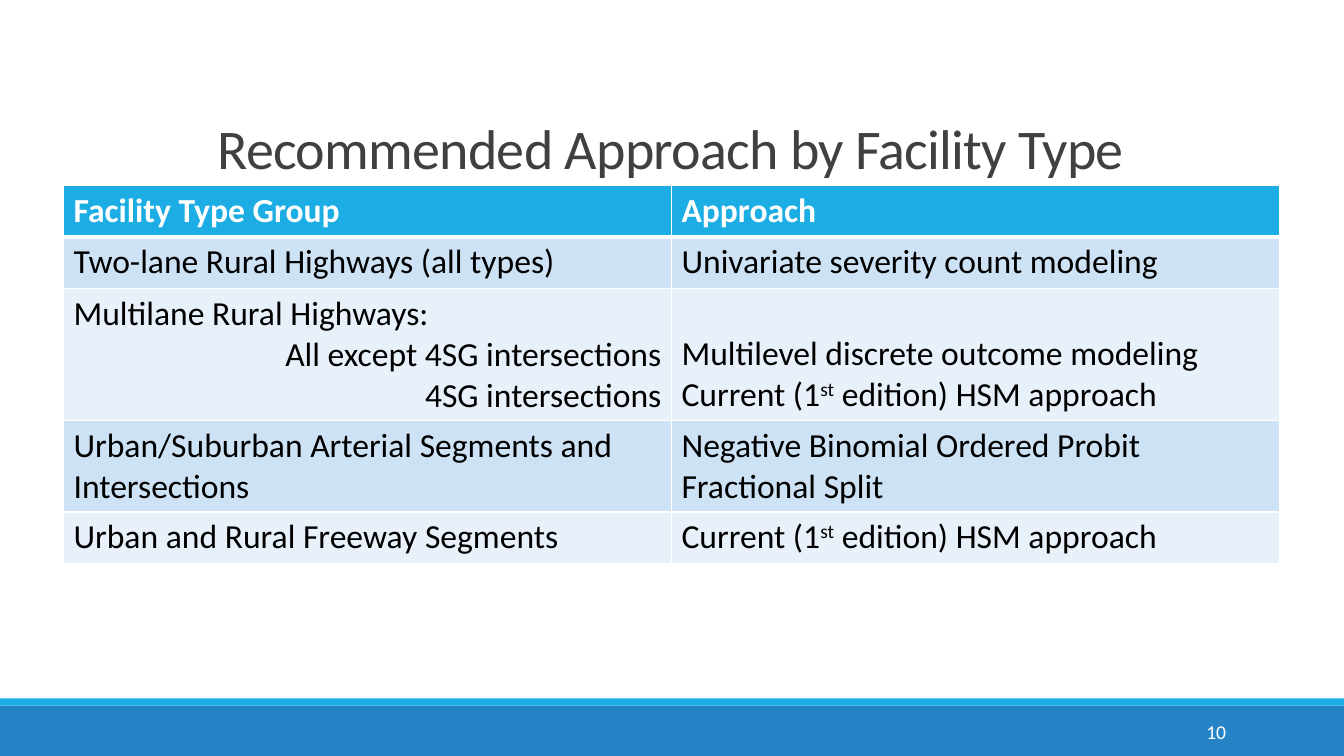
import pptx
import pptx.dml.color
import pptx.enum.shapes
import pptx.enum.text
import pptx.util
from lxml import etree
from pptx.oxml.ns import qn
from pptx.util import Inches

RGBColor = pptx.dml.color.RGBColor
PP_ALIGN = pptx.enum.text.PP_ALIGN
MSO_ANCHOR = pptx.enum.text.MSO_ANCHOR

WHITE = RGBColor(0xFF, 0xFF, 0xFF)
BLACK = RGBColor(0x00, 0x00, 0x00)
DARK_GRAY = RGBColor(0x40, 0x40, 0x40)
BLUE = RGBColor(0x26, 0x83, 0xC6)
CYAN = RGBColor(0x1C, 0xAD, 0xE4)
BAND_FILLS = [RGBColor(0xE8, 0xF1, 0xFA), RGBColor(0xCD, 0xE3, 0xF5)]


def write_paragraph(paragraph, text, size, color, bold=False):
    """Write text as runs; the parts between ^ marks become superscript."""
    for part_no, part in enumerate(text.split("^")):
        run = paragraph.add_run()
        run.text = part
        formats = {"name": "Calibri", "size": pptx.util.Pt(size), "bold": bold}
        for key, value in formats.items():
            setattr(run.font, key, value)
        run.font.color.rgb = color
        if part_no % 2:
            run._r.get_or_add_rPr().set("baseline", "30000")


def add_border(cell, side, width):
    line = etree.SubElement(cell._tc.get_or_add_tcPr(), qn(f"a:ln{side}"),
                            w=str(pptx.util.Pt(width)))
    fill = etree.SubElement(line, qn("a:solidFill"))
    etree.SubElement(fill, qn("a:srgbClr"), val=str(WHITE))


deck = pptx.Presentation()
deck.slide_width = Inches(13.33)
deck.slide_height = Inches(7.5)
slide = deck.slides.add_slide(deck.slide_layouts[6])

# Footer bands
for top, height, color in [(7, 0.5, BLUE), (6.93, 0.07, CYAN)]:
    band = slide.shapes.add_shape(pptx.enum.shapes.MSO_SHAPE.RECTANGLE, Inches(0),
                                  Inches(top), Inches(13.33), Inches(height))
    band.shadow.inherit = False
    band.fill.solid()
    band.fill.fore_color.rgb = color
    band.line.fill.background()

# Slide number and title
captions = [
    ("10", (10.83, 7.06, 1.43, 0.4), 14, WHITE,
     {"alignment": PP_ALIGN.RIGHT}, MSO_ANCHOR.MIDDLE, 0),
    ("Recommended Approach by Facility Type", (1.71, 1.09, 9.88, 0.75), 40, DARK_GRAY,
     {"alignment": PP_ALIGN.CENTER, "line_spacing": 0.85}, MSO_ANCHOR.BOTTOM, -50),
]
for text, box, size, color, paragraph_format, anchor, letter_spacing in captions:
    frame = slide.shapes.add_textbox(*map(Inches, box)).text_frame
    frame.word_wrap = True
    frame.vertical_anchor = anchor
    paragraph = frame.paragraphs[0]
    for key, value in paragraph_format.items():
        setattr(paragraph, key, value)
    write_paragraph(paragraph, text, size, color)
    paragraph.runs[0]._r.get_or_add_rPr().set("spc", str(letter_spacing))

# Approach table: row height, then the lines of each cell
HSM_APPROACH = "Current (1^st^ edition) HSM approach"
approaches = [
    (0.51, ["Facility Type Group"], ["Approach"]),
    (0.51, ["Two-lane Rural Highways (all types)"], ["Univariate severity count modeling"]),
    (1.31, ["Multilane Rural Highways:", "All except 4SG intersections", "4SG intersections"],
     ["Multilevel discrete outcome modeling", HSM_APPROACH]),
    (0.91, ["Urban/Suburban Arterial Segments and Intersections"],
     ["Negative Binomial Ordered Probit Fractional Split"]),
    (0.51, ["Urban and Rural Freeway Segments"], [HSM_APPROACH]),
]
table = slide.shapes.add_table(len(approaches), 2, Inches(0.63), Inches(1.84), Inches(12.06),
                               Inches(sum(row[0] for row in approaches))).table

for row_no, (height, *cells) in enumerate(approaches):
    table.rows[row_no].height = Inches(height)
    is_header = row_no == 0
    for col_no, lines in enumerate(cells):
        cell = table.cell(row_no, col_no)
        for side in "LRTB":
            under_header = (row_no, side) in [(0, "B"), (1, "T")]
            add_border(cell, side, 3 if under_header else 1)
        cell.fill.solid()
        cell.fill.fore_color.rgb = CYAN if is_header else BAND_FILLS[row_no % 2]
        # Bottom anchoring lines the approaches up with their sub-types
        if len(lines) == 2:
            cell.vertical_anchor = MSO_ANCHOR.BOTTOM
        for line_no, text in enumerate(lines):
            frame = cell.text_frame
            paragraph = frame.add_paragraph() if line_no else frame.paragraphs[0]
            if line_no and col_no == 0:
                paragraph.alignment = PP_ALIGN.RIGHT
            write_paragraph(paragraph, text, 24, WHITE if is_header else BLACK, is_header)

deck.save("out.pptx")
